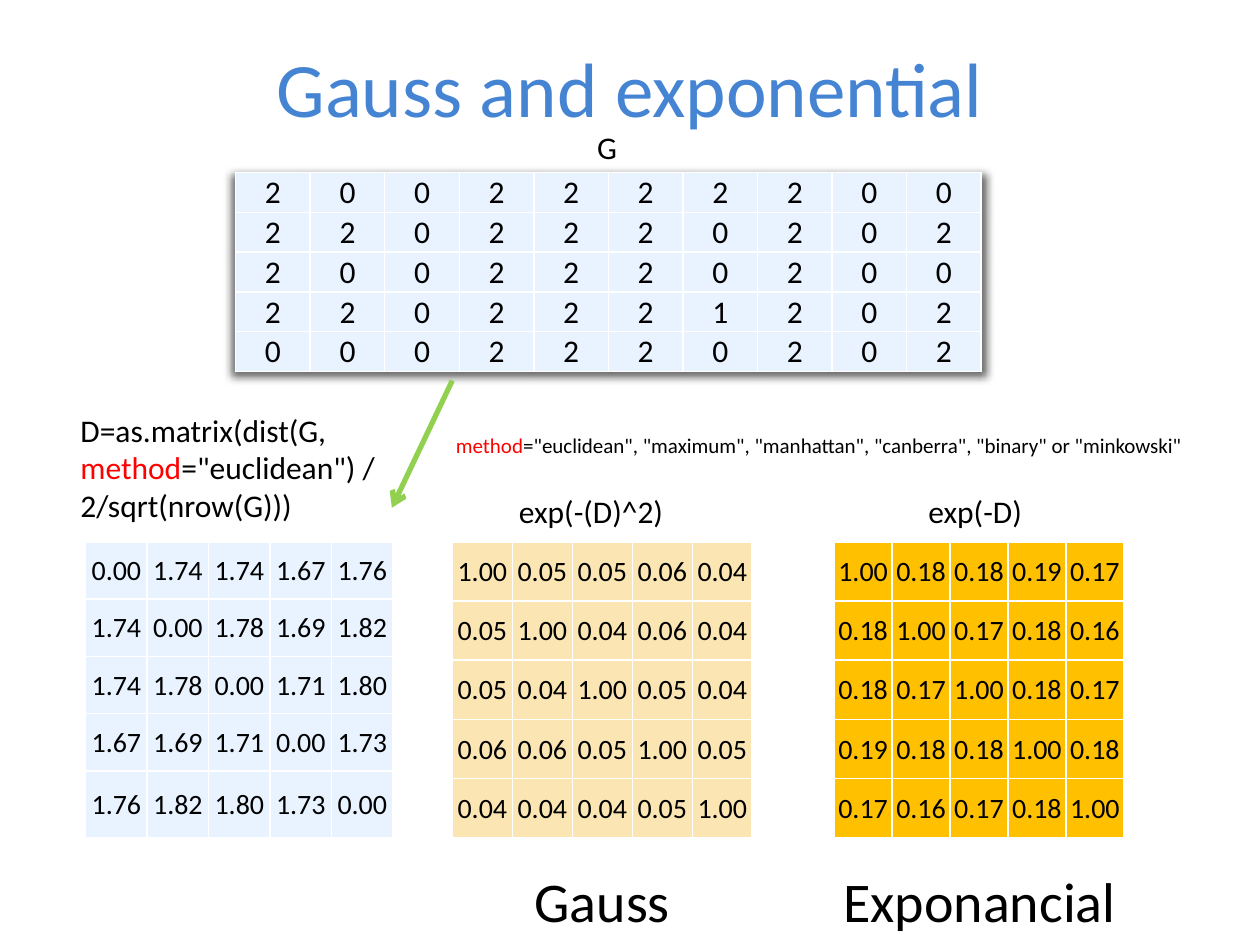
from lxml import etree
from pptx import Presentation
from pptx.dml.color import RGBColor
from pptx.enum.shapes import MSO_CONNECTOR
from pptx.enum.text import MSO_ANCHOR, MSO_AUTO_SIZE, PP_ALIGN
from pptx.oxml import parse_xml
from pptx.oxml.ns import nsdecls, qn
from pptx.util import Inches, Pt

FONT = "Calibri"
COLORS = {
    "title": "4584D3", "text": "000000", "method": "FF0000", "border": "FFFFFF",
    "arrow": "92D050", "blue": "E8F3FF", "cream": "FBE6B3", "gold": "FFC000",
}
MATRIX_TOP, MATRIX_HEIGHT = 4.3, 2.35

GENOTYPES = ["2002222200", "2202220202", "2002220200", "2202221202", "0002220202"]
# Upper triangles of the symmetric matrices, diagonal included
DISTANCE = ["0.00 1.74 1.74 1.67 1.76", "0.00 1.78 1.69 1.82", "0.00 1.71 1.80",
            "0.00 1.73", "0.00"]
GAUSS = ["1.00 0.05 0.05 0.06 0.04", "1.00 0.04 0.06 0.04", "1.00 0.05 0.04",
         "1.00 0.05", "1.00"]
EXPONENTIAL = ["1.00 0.18 0.18 0.19 0.17", "1.00 0.17 0.18 0.16", "1.00 0.18 0.17",
               "1.00 0.18", "1.00"]


def color(name):
    return RGBColor.from_string(COLORS[name])


def symmetric(triangle):
    upper = [row.split() for row in triangle]
    size = len(upper)
    return [[upper[min(i, j)][abs(i - j)] for j in range(size)] for i in range(size)]


def format_span(span, size, color_name="text"):
    span.font.name = FONT
    span.font.size = Pt(size)
    span.font.color.rgb = color(color_name)


def add_title(page, text):
    title = page.shapes.title
    title.left, title.top = Inches(0.5), 0
    title.width, title.height = Inches(9), Inches(1.37)
    title.text_frame.text = text
    title.text_frame.vertical_anchor = MSO_ANCHOR.MIDDLE
    para = title.text_frame.paragraphs[0]
    para.alignment = PP_ALIGN.CENTER
    format_span(para.runs[0], 44, "title")


def add_text(page, place, spans, size, wrap=True, caption=False):
    box = page.shapes.add_textbox(*map(Inches, place))
    frame = box.text_frame
    frame.word_wrap = wrap
    para = frame.paragraphs[0]
    if caption:
        frame.vertical_anchor = MSO_ANCHOR.MIDDLE
        para.alignment = PP_ALIGN.CENTER
    else:
        frame.auto_size = MSO_AUTO_SIZE.SHAPE_TO_FIT_TEXT
    for text, color_name in spans:
        span = para.add_run()
        span.text = text
        format_span(span, size, color_name)


def format_cell(cell, text, size, fill):
    cell.text_frame.text = text
    cell.vertical_anchor = MSO_ANCHOR.MIDDLE
    cell.margin_left = cell.margin_right = cell.margin_top = Inches(0.01)
    cell.margin_bottom = 0
    para = cell.text_frame.paragraphs[0]
    para.alignment = PP_ALIGN.CENTER
    format_span(para.runs[0], size)
    cell.fill.solid()
    cell.fill.fore_color.rgb = color(fill)
    # Borders come before the fill in the cell properties
    properties = cell._tc.get_or_add_tcPr()
    for index, side in enumerate("LRTB"):
        properties.insert(index, parse_xml(
            f'<a:ln{side} {nsdecls("a")} w="{Pt(1)}"><a:solidFill>'
            f'<a:srgbClr val="{COLORS["border"]}"/></a:solidFill></a:ln{side}>'))


def add_matrix(page, place, values, size, fill, last_row=None):
    rows, columns = len(values), len(values[0])
    table = page.shapes.add_table(rows, columns, *map(Inches, place)).table
    table.first_row = table.horz_banding = False
    width, height = place[2], place[3]
    for column in table.columns:
        column.width = Inches(width / columns)
    row_height = (height - last_row) / (rows - 1) if last_row else height / rows
    for row in table.rows:
        row.height = Inches(row_height)
    if last_row:
        table.rows[rows - 1].height = Inches(last_row)
    for i, row in enumerate(values):
        for j, value in enumerate(row):
            format_cell(table.cell(i, j), value, size, fill)
    return table


def add_table_shadow(table):
    table._tbl.tblPr.insert(0, parse_xml(
        f'<a:effectLst {nsdecls("a")}><a:outerShdw blurRad="{Pt(5)}" dist="{Pt(2)}" '
        'dir="5400000" sx="101000" sy="101000" algn="ctr" rotWithShape="0">'
        '<a:srgbClr val="000000"><a:alpha val="60000"/></a:srgbClr>'
        '</a:outerShdw></a:effectLst>'))


def add_arrow(page, start, end):
    arrow = page.shapes.add_connector(MSO_CONNECTOR.STRAIGHT, *map(Inches, start + end))
    arrow.line.color.rgb = color("arrow")
    arrow.line.width = Pt(3)
    etree.SubElement(arrow.line._get_or_add_ln(), qn("a:tailEnd"), type="arrow")
    etree.SubElement(arrow._element.spPr, qn("a:effectLst"))


def main():
    deck = Presentation()
    deck.slide_width, deck.slide_height = Inches(10), Inches(7.5)
    page = deck.slides.add_slide(deck.slide_layouts[5])
    add_title(page, "Gauss and exponential")

    # Genotype matrix
    genotype_table = add_matrix(page, (1.87, 1.37, 5.92, 1.56), GENOTYPES, 18, "blue")
    add_table_shadow(genotype_table)

    # Distance matrix and its two kernels
    for left, width, triangle, fill, last_row in (
        (0.68, 2.44, DISTANCE, "blue", 0.53),
        (3.59, 2.38, GAUSS, "cream", None),
        (6.62, 2.3, EXPONENTIAL, "gold", None),
    ):
        add_matrix(page, (left, MATRIX_TOP, width, MATRIX_HEIGHT),
                   symmetric(triangle), 16, fill, last_row)

    # Distance formula and arrow
    add_text(page, (0.54, 3.21, 2.66, 1.01),
             [("D=as.matrix(dist(G, ", "text"), ("method", "method"),
              ('="euclidean") /2/sqrt(nrow(G)))', "text")], 18)
    add_arrow(page, (3.59, 3.02), (3.11, 4.03))

    # Kernel names
    for left, width, name in ((3.9, 1.76, "Gauss"), (6.38, 2.79, "Exponancial")):
        add_text(page, (left, 6.89, width, 0.5), [(name, "text")], 32, caption=True)

    # Matrix headings
    for left, top, width, label in (
        (7.27, 3.86, 1, "exp(-D)"),
        (4.02, 3.86, 1.43, "exp(-(D)^2)"),
        (4.64, 0.97, 0.36, "G"),
    ):
        add_text(page, (left, top, width, 0.4), [(label, "text")], 18, wrap=False)

    # Available distance methods
    methods = '="euclidean", "maximum", "manhattan", "canberra", "binary" or "minkowski"'
    add_text(page, (3.52, 3.38, 6.42, 0.3),
             [("method", "method"), (methods, "text")], 12)

    deck.save("out.pptx")


if __name__ == "__main__":
    main()
